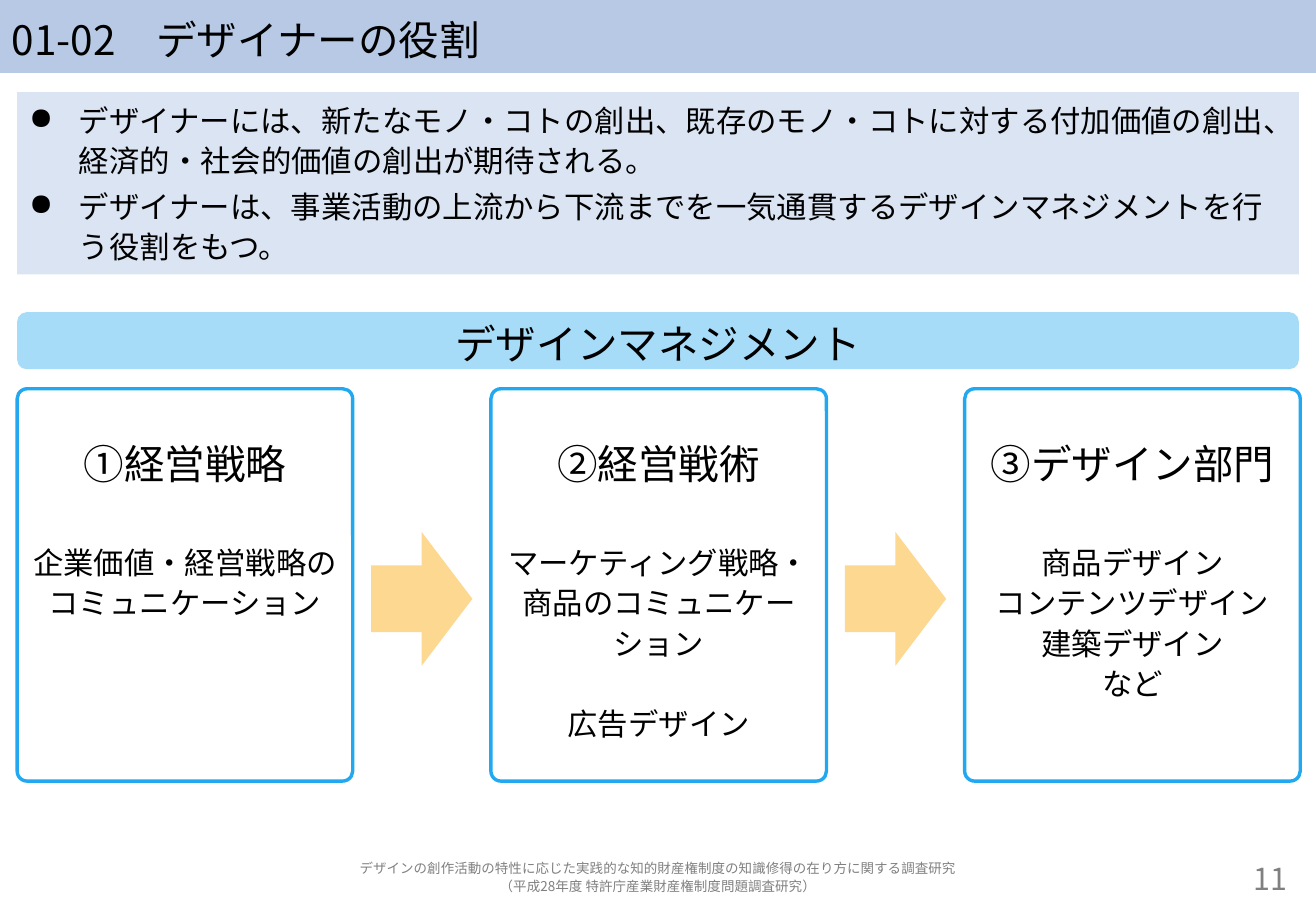
from dataclasses import dataclass

from lxml.etree import SubElement
from pptx import Presentation
from pptx.dml.color import RGBColor as RGB
from pptx.enum.shapes import MSO_SHAPE as Preset
from pptx.enum.text import MSO_ANCHOR as Anchor, PP_ALIGN as Align
from pptx.oxml.ns import qn
from pptx.shapes.autoshape import Shape
from pptx.util import Emu, Inches, Pt

SLIDE_WIDTH, SLIDE_HEIGHT = Inches(10.83), Inches(7.5)


@dataclass(frozen=True)
class Theme:
    font: str = "Noto Sans CJK JP"
    heading: int = 24
    body: int = 18
    source: int = 8
    ink: str = "000000"
    muted: str = "808080"
    title_band: str = "B7C9E5"
    summary_band: str = "DBE4F2"
    banner: str = "A7DCF9"
    card_line: str = "22A8F0"
    arrow: str = "FCD890"
    line_spacing: float = 1.1


THEME = Theme()


@dataclass(frozen=True)
class Box:
    """Position and size in percent of the slide's width and height."""
    left: float
    top: float
    width: float
    height: float

    def emu(self) -> tuple[Emu, Emu, Emu, Emu]:
        return (Emu(int(SLIDE_WIDTH * self.left / 100)), Emu(int(SLIDE_HEIGHT * self.top / 100)),
                Emu(int(SLIDE_WIDTH * self.width / 100)), Emu(int(SLIDE_HEIGHT * self.height / 100)))


@dataclass(frozen=True)
class Line:
    text: str
    size: int = THEME.body
    color: str = THEME.ink
    align: Align = Align.CENTER
    before: float = 0
    bullet: bool = False


@dataclass(frozen=True)
class Stage:
    heading: str
    details: tuple[Line, ...]


MARGIN, CONTENT_WIDTH = 1.3, 97.4
CARD_WIDTH, CARD_PITCH = 25.5, 36.0
ARROW_GAP, ARROW_WIDTH = 1.4, 7.7
HEADING_GAP, DETAIL_GAP = 31.6, 23.7

SUMMARY = (
    "デザイナーには、新たなモノ・コトの創出、既存のモノ・コトに対する付加価値の創出、経済的・社会的価値の創出が期待される。",
    "デザイナーは、事業活動の上流から下流までを一気通貫するデザインマネジメントを行う役割をもつ。",
)
STAGES = (
    Stage("①経営戦略", (
        Line("企業価値・経営戦略のコミュニケーション", before=HEADING_GAP),)),
    Stage("②経営戦術", (
        Line("マーケティング戦略・商品のコミュニケーション", before=HEADING_GAP),
        Line("広告デザイン", before=DETAIL_GAP))),
    Stage("③デザイン部門", (
        Line("商品デザイン", before=HEADING_GAP),
        Line("コンテンツデザイン"), Line("建築デザイン"), Line("など"))),
)
SOURCE = (
    "デザインの創作活動の特性に応じた実践的な知的財産権制度の知識修得の在り方に関する調査研究",
    "（平成28年度 特許庁産業財産権制度問題調査研究）",
)


def write(shape: Shape, lines: list[Line], anchor: Anchor = Anchor.MIDDLE) -> None:
    frame = shape.text_frame
    frame.word_wrap = True
    frame.vertical_anchor = anchor
    for index, line in enumerate(lines):
        paragraph = frame.add_paragraph() if index else frame.paragraphs[0]
        paragraph.text = line.text
        paragraph.alignment = line.align
        paragraph.line_spacing = THEME.line_spacing
        paragraph.space_before = Pt(line.before)
        font = paragraph.font
        font.name, font.size = THEME.font, Pt(line.size)
        font.color.rgb = RGB.from_string(line.color)
        properties = paragraph._p.get_or_add_pPr()
        defaults = properties.find(qn("a:defRPr"))
        SubElement(defaults, qn("a:ea")).set("typeface", THEME.font)
        if line.bullet:
            indent = Inches(0.41)
            properties.set("marL", str(indent))
            properties.set("indent", str(-indent))
            mark = SubElement(properties, qn("a:buChar"))
            mark.set("char", "●")
            defaults.addprevious(mark)


def add_panel(shapes, preset: Preset, box: Box, fill: str | None = None,
              outline: str | None = None) -> Shape:
    panel = shapes.add_shape(preset, *box.emu())
    panel.shadow.inherit = False
    if fill:
        panel.fill.solid()
        panel.fill.fore_color.rgb = RGB.from_string(fill)
    else:
        panel.fill.background()
    if outline:
        panel.line.color.rgb = RGB.from_string(outline)
        panel.line.width = Pt(2)
    else:
        panel.line.fill.background()
    return panel


def add_note(shapes, box: Box, lines: list[Line]) -> None:
    write(shapes.add_textbox(*box.emu()), lines)


def add_stage(shapes, column: int, stage: Stage) -> None:
    left = MARGIN + column * CARD_PITCH
    card = add_panel(shapes, Preset.ROUNDED_RECTANGLE, Box(left, 42.67, CARD_WIDTH, 43.07),
                     outline=THEME.card_line)
    card.adjustments[0] = 0.03
    card.text_frame.margin_top = Inches(0.35)
    write(card, [Line(stage.heading, THEME.heading), *stage.details], Anchor.TOP)
    if column < len(STAGES) - 1:
        add_panel(shapes, Preset.RIGHT_ARROW,
                  Box(left + CARD_WIDTH + ARROW_GAP, 58.4, ARROW_WIDTH, 14.67), THEME.arrow)


def main() -> None:
    deck = Presentation()
    deck.slide_width, deck.slide_height = SLIDE_WIDTH, SLIDE_HEIGHT
    shapes = deck.slides.add_slide(deck.slide_layouts[6]).shapes

    title = add_panel(shapes, Preset.RECTANGLE, Box(0, 0, 100, 8), THEME.title_band)
    write(title, [Line("01-02\u3000デザイナーの役割".replace("\u3000", "　"), THEME.heading, align=Align.LEFT)])

    summary = add_panel(shapes, Preset.RECTANGLE, Box(MARGIN, 10.13, CONTENT_WIDTH, 20),
                        THEME.summary_band)
    write(summary, [Line(text, align=Align.LEFT, before=3.6, bullet=True) for text in SUMMARY],
          Anchor.TOP)

    banner = add_panel(shapes, Preset.ROUNDED_RECTANGLE, Box(MARGIN, 34.27, CONTENT_WIDTH, 6.27),
                       THEME.banner)
    write(banner, [Line("デザインマネジメント", THEME.heading)])

    for column, stage in enumerate(STAGES):
        add_stage(shapes, column, stage)

    add_note(shapes, Box(MARGIN, 94.13, CONTENT_WIDTH, 4.13),
             [Line(text, THEME.source, THEME.muted) for text in SOURCE])
    add_note(shapes, Box(86.3, 94.13, 12.4, 4.13),
             [Line("11", color=THEME.muted, align=Align.RIGHT)])
    deck.save("out.pptx")


if __name__ == "__main__":
    main()
